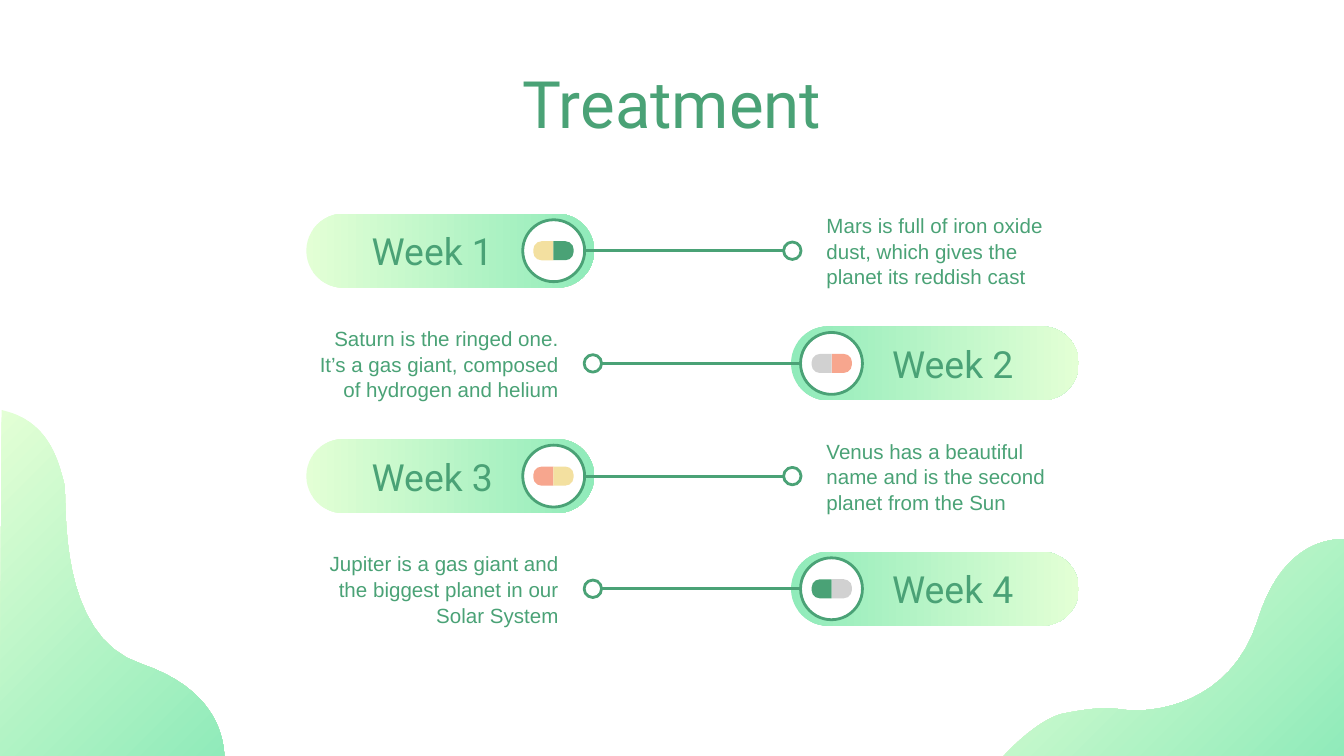
from dataclasses import dataclass

from lxml.etree import SubElement
from pptx import Presentation
from pptx.dml.color import RGBColor
from pptx.enum.shapes import MSO_CONNECTOR, MSO_SHAPE
from pptx.enum.text import MSO_ANCHOR, PP_ALIGN
from pptx.oxml.ns import qn
from pptx.util import Cm, Pt


@dataclass(frozen=True)
class Theme:
    green: str = "4AA276"
    mint: str = "90EBBA"
    lime: str = "E3FFD5"
    white: str = "FFFFFF"
    sand: str = "F3E0A0"
    coral: str = "F7A68E"
    gray: str = "D1D1D1"
    heading_font: str = "Roboto"
    body_font: str = "Arial"
    title_size: int = 35
    label_size: int = 20
    body_size: int = 11
    line_width: float = 1.5


THEME = Theme()
SLIDE_WIDTH, SLIDE_HEIGHT = 25.4, 14.29
AXIS = 13.09  # even weeks mirror odd weeks about this x
FIRST_ROW, ROW_PITCH = 4.74, 2.13
BAR_HEIGHT = 1.4

# Each curve: first control point, second control point, end point (cm)
RIGHT_WAVE = ((25.4, 10.19), [
    ((24.94, 10.19), (24.18, 10.41), (23.77, 11.73)),
    ((23.27, 13.31), (21.79, 13.51), (21.18, 13.41)),
    ((20.83, 13.36), (20.52, 13.41), (20.09, 13.49)),
    ((19.58, 13.61), (18.97, 14.29), (18.97, 14.29)),
], (SLIDE_WIDTH, SLIDE_HEIGHT))
LEFT_WAVE = ((4.24, 14.29), [
    ((4.22, 13.82), (3.99, 13.0), (2.67, 12.55)),
    ((1.07, 12.04), (1.27, 9.47), (1.22, 9.17)),
    ((1.09, 8.64), (0.89, 7.95), (0.03, 7.75)),
], (0, SLIDE_HEIGHT))

WEEKS = [
    ("Week 1", "Mars is full of iron oxide dust, which gives the planet its reddish cast",
     THEME.sand, THEME.green),
    ("Week 2", "Saturn is the ringed one. It’s a gas giant, composed of hydrogen and helium",
     THEME.gray, THEME.coral),
    ("Week 3", "Venus has a beautiful name and is the second planet from the Sun",
     THEME.coral, THEME.sand),
    ("Week 4", "Jupiter is a gas giant and the biggest planet in our Solar System",
     THEME.green, THEME.gray),
]


def color(value):
    return RGBColor.from_string(value)


def fill_gradient(shape, start, end, angle=0):
    shape.shadow.inherit = False
    shape.line.fill.background()
    shape.fill.gradient()
    shape.fill.gradient_angle = angle
    for stop, value in zip(shape.fill.gradient_stops, (start, end)):
        stop.color.rgb = color(value)


def add_shape(slide, kind, left, middle, width, height, fill=None, outline=None):
    """Add a preset shape whose vertical centre is at middle."""
    shape = slide.shapes.add_shape(
        kind, Cm(left), Cm(middle - height / 2), Cm(width), Cm(height))
    shape.shadow.inherit = False
    if fill:
        shape.fill.solid()
        shape.fill.fore_color.rgb = color(fill)
    else:
        shape.fill.background()
    if outline:
        shape.line.color.rgb = color(outline)
        shape.line.width = Pt(THEME.line_width)
    else:
        shape.line.fill.background()
    return shape


def add_text(slide, text, left, middle, width, height, *, font, size,
             align=PP_ALIGN.LEFT, spacing=1.0):
    box = slide.shapes.add_textbox(
        Cm(left), Cm(middle - height / 2), Cm(width), Cm(height))
    frame = box.text_frame
    frame.word_wrap = True
    frame.vertical_anchor = MSO_ANCHOR.MIDDLE
    frame.margin_left = frame.margin_right = Cm(0.25)
    frame.margin_top = frame.margin_bottom = Cm(0.25)
    paragraph = frame.paragraphs[0]
    paragraph.text = text
    paragraph.alignment = align
    paragraph.line_spacing = spacing
    paragraph.font.name = font
    paragraph.font.size = Pt(size)
    paragraph.font.color.rgb = color(THEME.green)


def add_line(slide, start, end, middle):
    line = slide.shapes.add_connector(
        MSO_CONNECTOR.STRAIGHT, Cm(start), Cm(middle), Cm(end), Cm(middle))
    line.line.color.rgb = color(THEME.green)
    line.line.width = Pt(THEME.line_width)
    SubElement(line._element.spPr, qn("a:effectLst"))


def bezier_points(start, first, second, end, steps=16):
    for step in range(1, steps + 1):
        t = step / steps
        u = 1 - t
        yield tuple(u**3 * a + 3 * u * u * t * b + 3 * u * t * t * c + t**3 * d
                    for a, b, c, d in zip(start, first, second, end))


def add_wave(slide, start, curves, corner):
    points = [start]
    for curve in curves:
        points.extend(bezier_points(points[-1], *curve))
    points.append(corner)
    outline = [(Cm(x), Cm(y)) for x, y in points]
    builder = slide.shapes.build_freeform(*outline[0])
    builder.add_line_segments(outline[1:])
    fill_gradient(builder.convert_to_shape(), THEME.lime, THEME.mint, 315)


def add_pill(slide, center, middle, left_color, right_color):
    length, height = 0.38, 0.36
    for side, rotation, fill in ((-1, 270, left_color), (1, 90, right_color)):
        half = add_shape(slide, MSO_SHAPE.ROUND_2_SAME_RECTANGLE,
                         center + side * length / 2 - height / 2, middle,
                         height, length, fill)
        half.adjustments[0] = 0.43
        half.rotation = rotation


def add_week(slide, index, label, description, left_color, right_color):
    middle = FIRST_ROW + index * ROW_PITCH
    mirrored = index % 2 == 1

    def place(left, width=0):
        return 2 * AXIS - left - width if mirrored else left

    label_align, body_align = PP_ALIGN.RIGHT, PP_ALIGN.LEFT
    bar_colors = THEME.lime, THEME.mint
    if mirrored:
        label_align, body_align = body_align, label_align
        bar_colors = bar_colors[::-1]

    bar = add_shape(slide, MSO_SHAPE.ROUNDED_RECTANGLE, place(5.79, 5.44), middle,
                    5.44, BAR_HEIGHT)
    bar.adjustments[0] = 0.5
    fill_gradient(bar, *bar_colors)
    add_line(slide, place(11.05), place(14.81), middle)
    add_shape(slide, MSO_SHAPE.OVAL, place(14.81, 0.33), middle, 0.33, 0.33,
              outline=THEME.green)
    add_shape(slide, MSO_SHAPE.OVAL, place(9.88, 1.17), middle, 1.17, 1.17,
              THEME.white, THEME.green)
    add_pill(slide, place(10.46), middle, left_color, right_color)
    add_text(slide, label, place(5.79, 3.78), middle, 3.78, BAR_HEIGHT,
             font=THEME.heading_font, size=THEME.label_size, align=label_align)
    add_text(slide, description, place(15.37, 5.03), middle, 5.03, BAR_HEIGHT,
             font=THEME.body_font, size=THEME.body_size, align=body_align,
             spacing=1.04)


def main():
    presentation = Presentation()
    presentation.slide_width = Cm(SLIDE_WIDTH)
    presentation.slide_height = Cm(SLIDE_HEIGHT)
    slide = presentation.slides.add_slide(presentation.slide_layouts[6])
    for wave in (RIGHT_WAVE, LEFT_WAVE):
        add_wave(slide, *wave)
    add_text(slide, "Treatment", 2, 1.94, 21.4, 0.9, font=THEME.heading_font,
             size=THEME.title_size, align=PP_ALIGN.CENTER)
    for index, week in enumerate(WEEKS):
        add_week(slide, index, *week)
    presentation.save("out.pptx")


if __name__ == "__main__":
    main()
